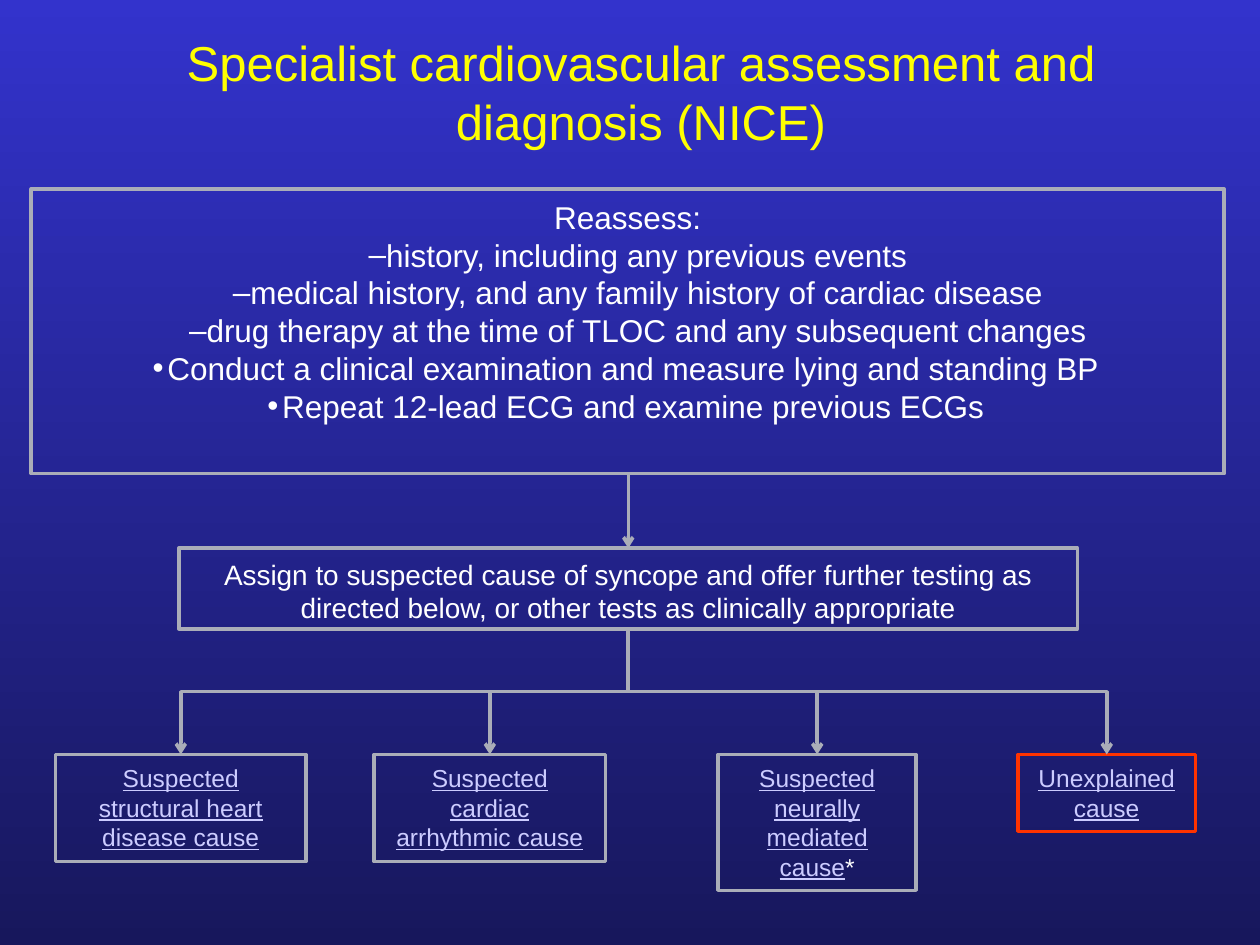
from lxml import etree
from pptx import Presentation
from pptx import util as u
from pptx.dml.color import RGBColor
from pptx.enum import shapes, text
from pptx.oxml import ns

TOP_BLUE = RGBColor(0x33, 0x33, 0xCC)
DEEP_BLUE = RGBColor(0x17, 0x17, 0x5C)
YELLOW = RGBColor(0xFF, 0xFF, 0x00)
WHITE = RGBColor(0xFF, 0xFF, 0xFF)
LILAC = RGBColor(0xCC, 0xCC, 0xFF)
GREY = RGBColor(0xAA, 0xAD, 0xB8)
RED = RGBColor(0xFF, 0x33, 0x00)

TITLE_BOX = (2.11, 0.53, 21.62, 2.64)
REASSESS_BOX = (0.63, 3.81, 24.05, 5.74)
ASSIGN_BOX = (3.61, 11.05, 18.11, 1.63)
CAUSE_TOP = 15.21

REASSESS_LINES = [
    ("Reassess:", None, 0),
    ("history, including any previous events", "–", 0.71),
    ("medical history, and any family history of cardiac disease", "–", 0.71),
    ("drug therapy at the time of TLOC and any subsequent changes", "–", 0.71),
    ("Conduct a clinical examination and measure lying and standing BP", "•", 0),
    ("Repeat 12-lead ECG and examine previous ECGs", "•", 0),
]
CAUSES = [
    ("Suspected structural heart disease cause", "", 1.12, 5.05, 2.16, GREY),
    ("Suspected cardiac arrhythmic cause", "", 7.54, 4.67, 2.16, GREY),
    ("Suspected neurally mediated cause", "*", 14.48, 3.99, 2.74, GREY),
    ("Unexplained cause", "", 20.52, 3.58, 1.55, RED),
]


def add_span(para, words, size=18, color=WHITE, underline=False):
    span = para.add_run()
    span.text = words
    span.font.name = "Arial"
    span.font.size = u.Pt(size)
    span.font.color.rgb = color
    span.font.underline = underline
    para.alignment = text.PP_ALIGN.CENTER


def hang(para, bullet, margin):
    props = para._p.get_or_add_pPr()
    props.set("marL", str(u.Cm(margin)))
    props.set("indent", str(u.Cm(-0.3)))
    if bullet:
        etree.SubElement(props, ns.qn("a:buFont"), typeface="Arial")
        etree.SubElement(props, ns.qn("a:buChar"), char=bullet)


def add_box(page, area, color=GREY):
    box = page.shapes.add_shape(shapes.MSO_SHAPE.RECTANGLE, *map(u.Cm, area))
    box.shadow.inherit = False
    box.fill.background()
    box.line.color.rgb = color
    box.line.width = u.Pt(2)
    frame = box.text_frame
    frame.word_wrap = True
    frame.vertical_anchor = text.MSO_ANCHOR.TOP
    frame.margin_left = frame.margin_right = u.Cm(0.36)
    frame.margin_top = frame.margin_bottom = u.Cm(0.18)
    return box


def add_arrow(page, kind, start, end):
    arrow = page.shapes.add_connector(kind, *map(u.Cm, start + end))
    arrow.line.color.rgb = GREY
    arrow.line.width = u.Pt(2)
    line = arrow.line._get_or_add_ln()
    etree.SubElement(line, ns.qn("a:tailEnd"), type="arrow")
    etree.SubElement(arrow.element.spPr, ns.qn("a:effectLst"))
    return arrow


def add_branch(page, start, end):
    (x1, y1), (x2, y2) = start, end
    middle_x, middle_y = (x1 + x2) / 2, (y1 + y2) / 2
    half_run = (y2 - y1) / 2
    half_span = abs(x2 - x1) / 2
    goes_right = x2 > x1
    side = -half_run if goes_right else half_run
    arrow = add_arrow(page, shapes.MSO_CONNECTOR.ELBOW,
                      (middle_x - side, middle_y - half_span),
                      (middle_x + side, middle_y + half_span))
    frame = arrow.element.spPr.find(ns.qn("a:xfrm"))
    frame.set("rot", str((270 if goes_right else 90) * 60000))


def add_background(page):
    fill = page.background.fill
    fill.gradient()
    fill.gradient_angle = 270
    for stop, color in zip(fill.gradient_stops, (TOP_BLUE, DEEP_BLUE)):
        stop.color.rgb = color
    fill.gradient_stops[0].position = 0
    fill.gradient_stops[1].position = 1


def add_title(page, area):
    title = page.shapes.title
    title.left, title.top, title.width, title.height = map(u.Cm, area)
    frame = title.text_frame
    frame.auto_size = text.MSO_AUTO_SIZE.NONE
    frame.vertical_anchor = text.MSO_ANCHOR.MIDDLE
    add_span(frame.paragraphs[0],
             "Specialist cardiovascular assessment and diagnosis (NICE)",
             size=28, color=YELLOW)


def add_reassess(page, area):
    frame = add_box(page, area).text_frame
    for index, (words, bullet, margin) in enumerate(REASSESS_LINES):
        para = frame.add_paragraph() if index else frame.paragraphs[0]
        add_span(para, words)
        hang(para, bullet, margin)


def add_assign(page, area):
    box = add_box(page, area)
    add_span(box.text_frame.paragraphs[0],
             "Assign to suspected cause of syncope and offer further testing "
             "as directed below, or other tests as clinically appropriate",
             size=16)


def add_causes(page, top, fork):
    for words, mark, left, width, height, color in CAUSES:
        box = add_box(page, (left, top, width, height), color)
        para = box.text_frame.paragraphs[0]
        add_span(para, words, size=14, color=LILAC, underline=True)
        if mark:
            add_span(para, mark, size=14)
        add_branch(page, fork, (left + width / 2, top))


def main():
    deck = Presentation()
    deck.slide_width, deck.slide_height = u.Cm(25.4), u.Cm(19.05)
    page = deck.slides.add_slide(deck.slide_layouts.get_by_name("Title Only"))
    add_background(page)
    add_title(page, TITLE_BOX)
    add_reassess(page, REASSESS_BOX)
    add_assign(page, ASSIGN_BOX)
    left, top, width, height = ASSIGN_BOX
    center = left + width / 2
    add_arrow(page, shapes.MSO_CONNECTOR.STRAIGHT,
              (center, REASSESS_BOX[1] + REASSESS_BOX[3]), (center, top))
    add_causes(page, CAUSE_TOP, (center, top + height))
    deck.save("out.pptx")


if __name__ == "__main__":
    main()
